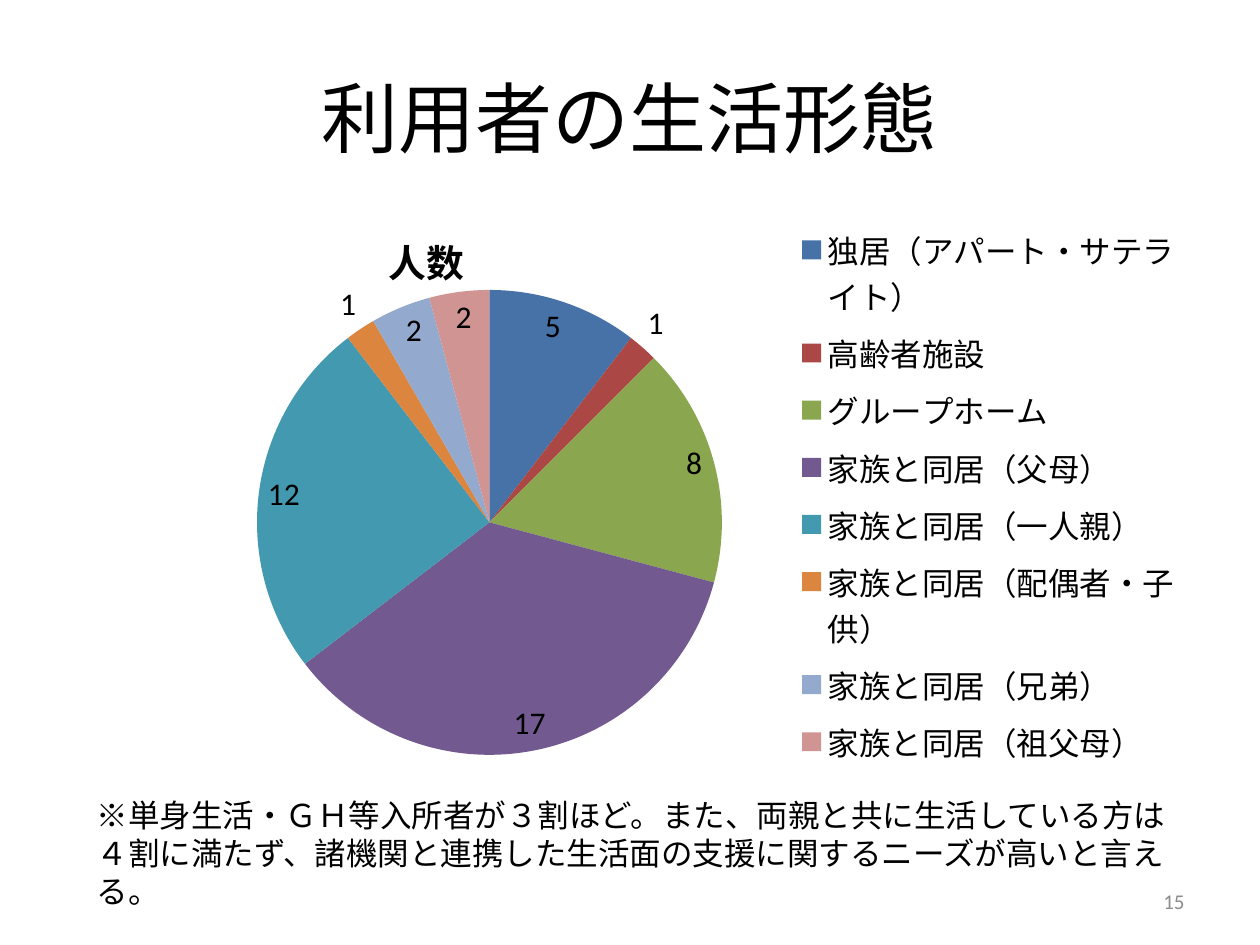
"""Build the slide on the living arrangements of service users."""
from dataclasses import dataclass

from lxml import etree
from pptx import Presentation
from pptx.chart.data import CategoryChartData
from pptx.dml.color import RGBColor
from pptx.enum import chart as charts, text
from pptx.oxml import ns
from pptx.util import Pt


@dataclass(frozen=True)
class Theme:
    font: str = "Calibri"
    ink: str = "000000"
    muted: str = "8C8C8C"
    title_size: float = 44
    chart_title_size: float = 21.6
    body_size: float = 18
    number_size: float = 12


@dataclass(frozen=True)
class Box:
    left: float
    top: float
    width: float
    height: float


@dataclass(frozen=True)
class Living:
    name: str
    people: int
    color: str


THEME = Theme()
SERIES_NAME = "人数"
LIVINGS = [
    Living("独居（アパート・サテライト）", 5, "4672A8"),
    Living("高齢者施設", 1, "AB4744"),
    Living("グループホーム", 8, "8AA64F"),
    Living("家族と同居（父母）", 17, "725990"),
    Living("家族と同居（一人親）", 12, "4299B0"),
    Living("家族と同居（配偶者・子供）", 1, "DC853E"),
    Living("家族と同居（兄弟）", 2, "93A9CE"),
    Living("家族と同居（祖父母）", 2, "D09493"),
]
NOTE = ("※単身生活・ＧＨ等入所者が３割ほど。また、両親と共に生活している方は"
        "４割に満たず、諸機関と連携した生活面の支援に関するニーズが高いと言える。")


def place(shape, box: Box) -> None:
    """Move and size a shape."""
    shape.left, shape.top = Pt(box.left), Pt(box.top)
    shape.width, shape.height = Pt(box.width), Pt(box.height)


def style(font, size: float, color: str = THEME.ink, bold: bool = False) -> None:
    """Apply the theme typeface to a font."""
    font.name, font.size, font.bold = THEME.font, Pt(size), bold
    font.color.rgb = RGBColor.from_string(color)


def write(shape, words: str, size: float, color: str, align, anchor) -> None:
    """Write one paragraph into a shape."""
    frame = shape.text_frame
    frame.word_wrap = True
    frame.vertical_anchor = anchor
    paragraph = frame.paragraphs[0]
    paragraph.alignment = align
    run = paragraph.add_run()
    run.text = words
    style(run.font, size, color)


def add_text(slide, box: Box, words: str, size: float, color: str, align, anchor) -> None:
    """Add a wrapped text box."""
    shape = slide.shapes.add_textbox(*map(Pt, (box.left, box.top, box.width, box.height)))
    write(shape, words, size, color, align, anchor)


def set_layout(parent, before: tuple, **values) -> None:
    """Give a chart part a manual layout, after the named siblings."""
    for old in parent.findall(ns.qn("c:layout")):
        parent.remove(old)
    layout = etree.Element(ns.qn("c:layout"))
    manual = etree.SubElement(layout, ns.qn("c:manualLayout"))
    for tag, value in values.items():
        etree.SubElement(manual, ns.qn(f"c:{tag}")).set("val", str(value))
    tags = [ns.qn(f"c:{name}") for name in before]
    parent.insert(sum(child.tag in tags for child in parent), layout)


def add_pie(slide, box: Box, livings: list[Living]) -> None:
    """Add the pie chart with its title, labels and legend."""
    data = CategoryChartData()
    data.categories = [living.name for living in livings]
    data.add_series(SERIES_NAME, [living.people for living in livings])
    frame = slide.shapes.add_chart(
        charts.XL_CHART_TYPE.PIE,
        *map(Pt, (box.left, box.top, box.width, box.height)), data)
    chart = frame.chart
    style(chart.font, THEME.body_size)

    chart.has_title = True
    run = chart.chart_title.text_frame.paragraphs[0].add_run()
    run.text = SERIES_NAME
    style(run.font, THEME.chart_title_size, bold=True)
    title = chart.chart_title._element
    set_layout(title, ("tx",), xMode="edge", yMode="edge", x=0.28, y=0.03)

    chart.has_legend = True
    legend = chart.legend
    legend.position = charts.XL_LEGEND_POSITION.RIGHT
    legend.include_in_layout = False
    style(legend.font, THEME.body_size)
    set_layout(legend._element, ("legendPos", "legendEntry"),
               xMode="edge", yMode="edge", x=0.64, y=0.02, w=0.35, h=0.95)

    plot = chart.plots[0]
    plot.vary_by_categories = True
    plot.has_data_labels = True
    labels = plot.data_labels
    labels.show_value, labels.show_percentage = True, False
    labels.position = charts.XL_LABEL_POSITION.BEST_FIT
    style(labels.font, THEME.body_size)
    for index, living in enumerate(livings):
        fill = plot.series[0].points[index].format.fill
        fill.solid()
        fill.fore_color.rgb = RGBColor.from_string(living.color)
    area = chart._chartSpace.find(".//" + ns.qn("c:plotArea"))
    set_layout(area, (), layoutTarget="inner", xMode="edge", yMode="edge",
               x=0.17, y=0.14, w=0.41, h=0.8)


def main() -> None:
    """Build and save the presentation."""
    presentation = Presentation()
    presentation.slide_width, presentation.slide_height = Pt(720), Pt(540)
    slide = presentation.slides.add_slide(presentation.slide_layouts[5])
    align, anchor = text.PP_ALIGN, text.MSO_ANCHOR
    place(slide.shapes.title, Box(36, 21.6, 648, 90))
    write(slide.shapes.title, "利用者の生活形態", THEME.title_size, THEME.ink,
          align.CENTER, anchor.MIDDLE)
    add_text(slide, Box(48.2, 451.4, 629.3, 51), NOTE, THEME.body_size, THEME.ink,
             align.LEFT, anchor.TOP)
    add_text(slide, Box(516, 500.5, 168, 28.8), "15", THEME.number_size, THEME.muted,
             align.RIGHT, anchor.MIDDLE)
    add_pie(slide, Box(36.7, 116.6, 648, 337), LIVINGS)
    presentation.save("out.pptx")


if __name__ == "__main__":
    main()
